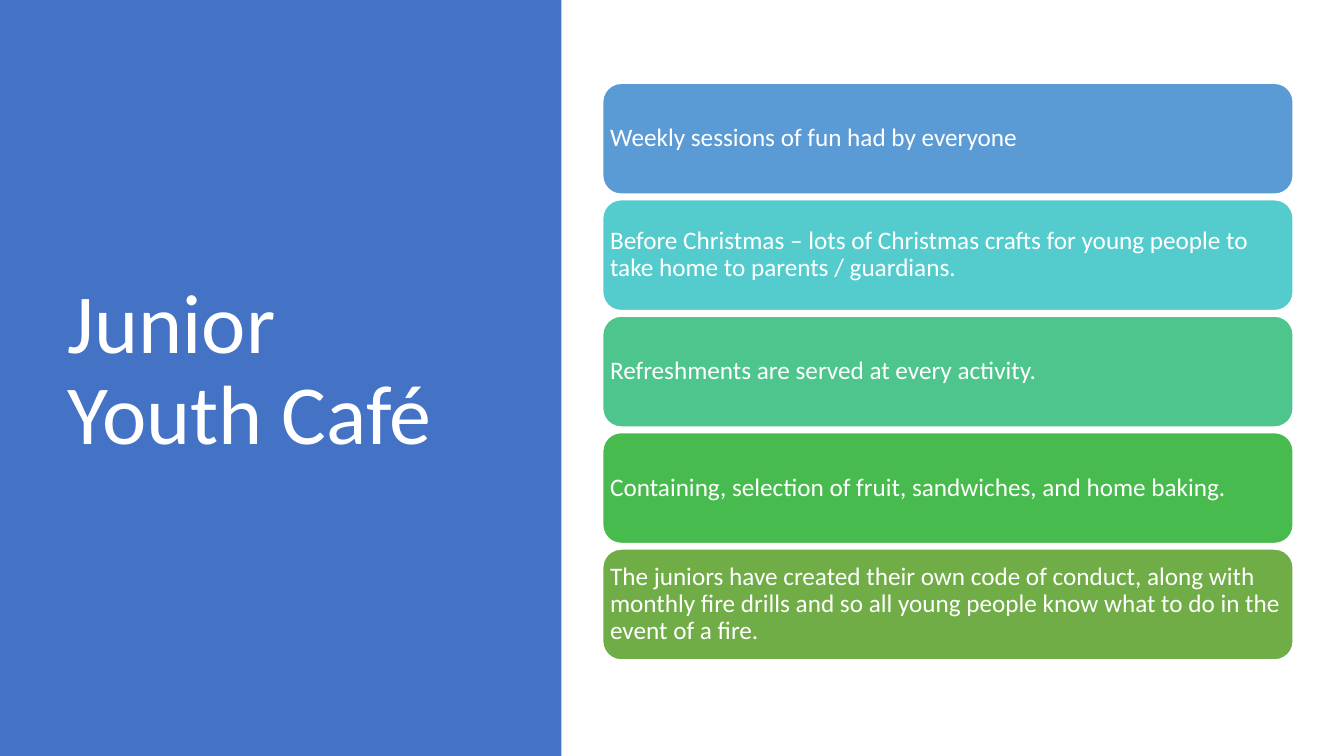
import pptx
import pptx.util
import pptx.dml.color
import pptx.enum.shapes
import pptx.enum.text

Cm = pptx.util.Cm
SHAPE = pptx.enum.shapes.MSO_SHAPE
TEXT = pptx.enum.text

WHITE = "FFFFFF"
BLUE = "4472C4"
POINTS = [
    ("5B9BD5", "Weekly sessions of fun had by everyone"),
    ("54CCCD", "Before Christmas – lots of Christmas crafts for young people "
               "to take home to parents / guardians."),
    ("4DC58D", "Refreshments are served at every activity."),
    ("48BB4F", "Containing, selection of fruit, sandwiches, and home baking."),
    ("70AD47", "The juniors have created their own code of conduct, along with "
               "monthly fire drills and so all young people know what to do in "
               "the event of a fire."),
]


def paint(part, color):
    if hasattr(part, "solid"):
        part.solid()
        part = part.fore_color
    part.rgb = pptx.dml.color.RGBColor.from_string(color)


def apply(item, values):
    for name, value in values.items():
        setattr(item, name, value)


def write(frame, text, size):
    frame.text = text
    apply(frame, {"word_wrap": True, "auto_size": TEXT.MSO_AUTO_SIZE.NONE,
                  "vertical_anchor": TEXT.MSO_ANCHOR.MIDDLE})
    para = frame.paragraphs[0]
    apply(para, {"alignment": TEXT.PP_ALIGN.LEFT, "line_spacing": 0.9})
    font = para.runs[0].font
    apply(font, {"name": "Calibri", "size": pptx.util.Pt(size)})
    paint(font.color, WHITE)


def block(shapes, kind, box, color):
    shape = shapes.add_shape(kind, *[Cm(n) for n in box])
    shape.shadow.inherit = False
    paint(shape.fill, color)
    return shape


def banner(slide, box, text):
    """Coloured side panel with the title on it."""
    left, top, width, height = box
    panel = block(slide.shapes, SHAPE.RECTANGLE, box, BLUE)
    panel.line.fill.background()
    title = slide.shapes.title
    title.element.addprevious(panel.element)  # panel goes behind the title
    apply(title, {"left": Cm(left + 1.45), "top": Cm(top + 1.73),
                  "width": Cm(width - 3.58), "height": Cm(height - 3.76)})
    write(title.text_frame, text, 60)


def stack(slide, box, points, gap):
    """Equal rounded bars, one below the other."""
    left, top, width, height = box
    tall = (height - gap * (len(points) - 1)) / len(points)
    group = slide.shapes.add_group_shape()
    for i, (color, text) in enumerate(points):
        spot = (left, top + i * (tall + gap), width, tall)
        bar = block(group.shapes, SHAPE.ROUNDED_RECTANGLE, spot, color)
        paint(bar.line.fill, WHITE)
        bar.line.width = pptx.util.Pt(1)
        sides = ("left", "top", "right", "bottom")
        apply(bar.text_frame, {"margin_" + side: Cm(0.05) for side in sides})
        write(bar.text_frame, text, 18)


def main():
    deck = pptx.Presentation()
    apply(deck, {"slide_width": Cm(33.87), "slide_height": Cm(19.05)})
    slide = deck.slides.add_slide(deck.slide_layouts[5])
    banner(slide, (0, 0, 14.15, 19.05), "Junior Youth Café")
    stack(slide, (15.19, 2.1, 17.4, 14.53), POINTS, 0.14)
    deck.save("out.pptx")


if __name__ == "__main__":
    main()
